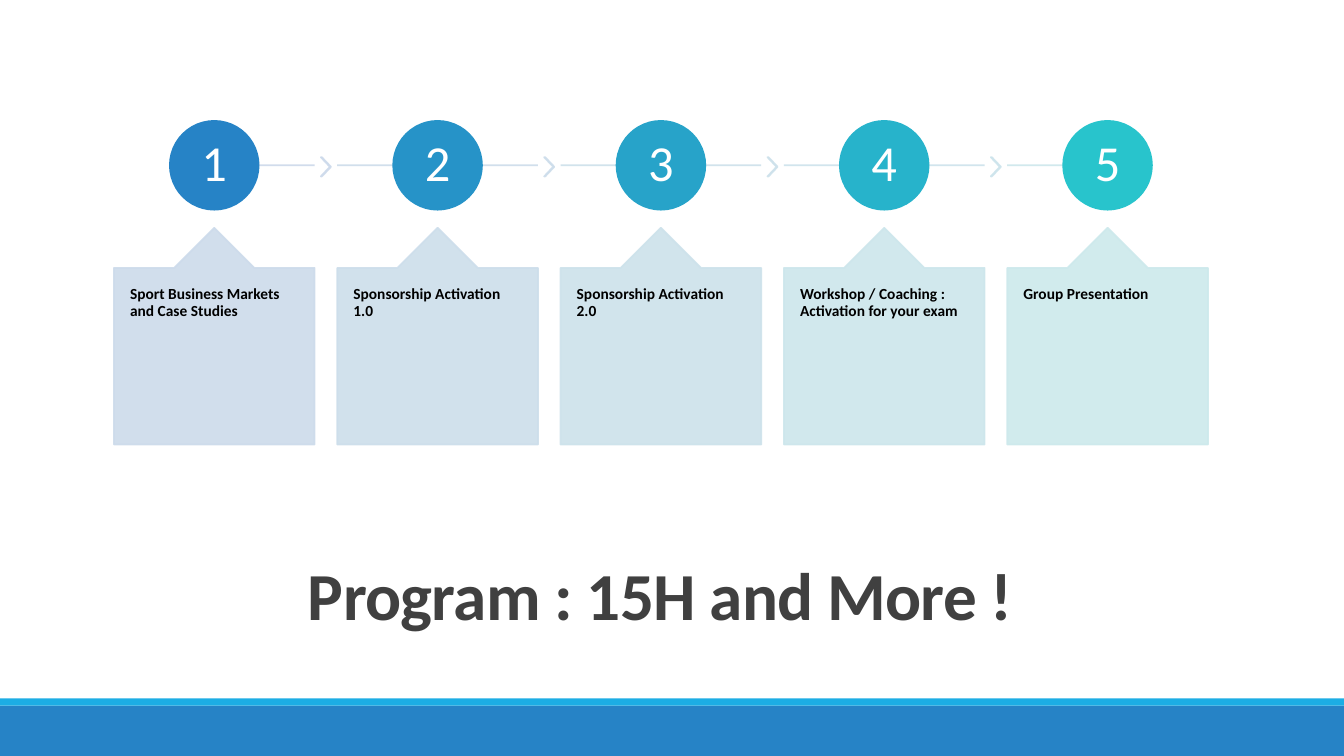
from dataclasses import dataclass

from lxml.etree import SubElement
from pptx import Presentation
from pptx.dml.color import RGBColor
from pptx.enum.shapes import MSO_CONNECTOR, MSO_SHAPE
from pptx.enum.text import MSO_ANCHOR, MSO_AUTO_SIZE, PP_ALIGN
from pptx.oxml.ns import qn
from pptx.util import Inches, Pt

COLORS = {
    "bar": "2683C6", "stripe": "1CADE4", "title": "404040",
    "number": "FFFFFF", "body": "000000",
}
FONT = "Calibri"
OPACITY = 90

# Column grid, in inches
SLIDE_W, SLIDE_H = 13.33, 7.5
GRID_LEFT, CARD_W, COLUMNS = 1.13, 1.99, 5
PITCH = (9.99 - GRID_LEFT) / (COLUMNS - 1)
GAP = PITCH - CARD_W
# Rows, in inches
AXIS_Y, CIRCLE_D = 1.64, 0.88
CHEVRON_W, CHEVRON_H, CHEVRON_Y = 0.1, 0.19, 1.56
CARD_Y, CARD_H = 2.26, 2.15
STRIPE_Y, BAR_Y = 6.93, 7.0


@dataclass(frozen=True)
class Step:
    label: str
    circle: str
    line: str
    chevron: str
    card: str


STEPS = [
    Step("Sport Business Markets and Case Studies", "2683C6", "CDD9EA", "CDDAEB", "CDDBEB"),
    Step("Sponsorship Activation 1.0", "2693C8", "CDDCEB", "CDDDEB", "CDDEEB"),
    Step("Sponsorship Activation 2.0", "27A3C9", "CDE0EB", "CDE1EB", "CDE2EB"),
    Step("Workshop / Coaching : Activation for your exam", "27B3CB", "CDE3EC", "CDE4EC", "CDE6EC"),
    Step("Group Presentation", "28C4CC", "CDE7EC", "CDE7EC", "CDE9EC"),
]


def set_opacity(s, percent: int) -> None:
    """Apply one opacity to every solid colour of the shape's fill and line."""
    for color in s._element.spPr.iter(qn("a:srgbClr")):
        SubElement(color, qn("a:alpha"), val=str(percent * 1000))


def add_filled(slide, kind, x: float, y: float, w: float, h: float,
               color: str, outline: bool = True):
    s = slide.shapes.add_shape(kind, Inches(x), Inches(y), Inches(w), Inches(h))
    s.shadow.inherit = False
    s.fill.solid()
    s.fill.fore_color.rgb = RGBColor.from_string(color)
    if outline:
        s.line.color.rgb = RGBColor.from_string(color)
        s.line.width = Pt(1.25)
    else:
        s.line.fill.background()
    return s


def add_axis(slide, x1: float, x2: float, color: str) -> None:
    s = slide.shapes.add_connector(MSO_CONNECTOR.STRAIGHT, Inches(x1), Inches(AXIS_Y),
                                   Inches(x2), Inches(AXIS_Y))
    s.line.color.rgb = RGBColor.from_string(color)
    s.line.width = Pt(1.25)
    SubElement(s._element.spPr, qn("a:effectLst"))
    set_opacity(s, OPACITY)


def set_text(s, text: str, size: int, color: str, align, anchor,
             inset_x: float, inset_y: float, bold: bool = False, spacing: float = 0.9):
    tf = s.text_frame
    tf.word_wrap = True
    tf.auto_size = MSO_AUTO_SIZE.NONE
    tf.vertical_anchor = anchor
    tf.margin_left = tf.margin_right = Inches(inset_x)
    tf.margin_top = tf.margin_bottom = Inches(inset_y)
    p = tf.paragraphs[0]
    p.text = text
    p.alignment = align
    p.line_spacing = spacing
    p.font.name = FONT
    p.font.size = Pt(size)
    p.font.bold = bold
    p.font.color.rgb = RGBColor.from_string(color)
    return tf


def add_step(slide, index: int, step: Step) -> None:
    left = GRID_LEFT + index * PITCH
    right, center = left + CARD_W, left + CARD_W / 2
    first, last = index == 0, index == COLUMNS - 1

    add_axis(slide, center if first else left, center if last else right, step.line)
    if not last:
        s = add_filled(slide, MSO_SHAPE.CHEVRON, right + (GAP - CHEVRON_W) / 2, CHEVRON_Y,
                       CHEVRON_W, CHEVRON_H, step.chevron)
        s.adjustments[0] = 0.9
        set_opacity(s, OPACITY)

    s = add_filled(slide, MSO_SHAPE.OVAL, center - CIRCLE_D / 2, AXIS_Y - CIRCLE_D / 2,
                   CIRCLE_D, CIRCLE_D, step.circle)
    set_text(s, str(index + 1), 36, COLORS["number"], PP_ALIGN.CENTER,
             MSO_ANCHOR.MIDDLE, 0.03, 0.03)

    s = add_filled(slide, MSO_SHAPE.UP_ARROW_CALLOUT, left, CARD_Y, CARD_W, CARD_H, step.card)
    for i, value in enumerate((0.5, 0.2, 0.2, 1)):
        s.adjustments[i] = value
    set_opacity(s, OPACITY)
    set_text(s, step.label, 11, COLORS["body"], PP_ALIGN.LEFT, MSO_ANCHOR.TOP,
             0.16, 0.18, bold=True)


def add_title(slide, text: str) -> None:
    s = slide.shapes.title
    s.left, s.top, s.width, s.height = Inches(1.2), Inches(5.3), Inches(11), Inches(1.3)
    tf = set_text(s, text, 48, COLORS["title"], PP_ALIGN.CENTER, MSO_ANCHOR.MIDDLE,
                  0.1, 0.05, bold=True, spacing=0.85)
    tf.margin_right = Inches(0.4)
    tf.paragraphs[0].runs[0].font._element.set("spc", "-50")


def main() -> None:
    prs = Presentation()
    prs.slide_width, prs.slide_height = Inches(SLIDE_W), Inches(SLIDE_H)
    slide = prs.slides.add_slide(prs.slide_layouts[5])
    add_filled(slide, MSO_SHAPE.RECTANGLE, 0, BAR_Y, SLIDE_W, SLIDE_H - BAR_Y,
               COLORS["bar"], outline=False)
    add_filled(slide, MSO_SHAPE.RECTANGLE, 0, STRIPE_Y, SLIDE_W, BAR_Y - STRIPE_Y,
               COLORS["stripe"], outline=False)
    add_title(slide, "Program : 15H and More !")
    for index, step in enumerate(STEPS):
        add_step(slide, index, step)
    prs.save("out.pptx")


if __name__ == "__main__":
    main()
